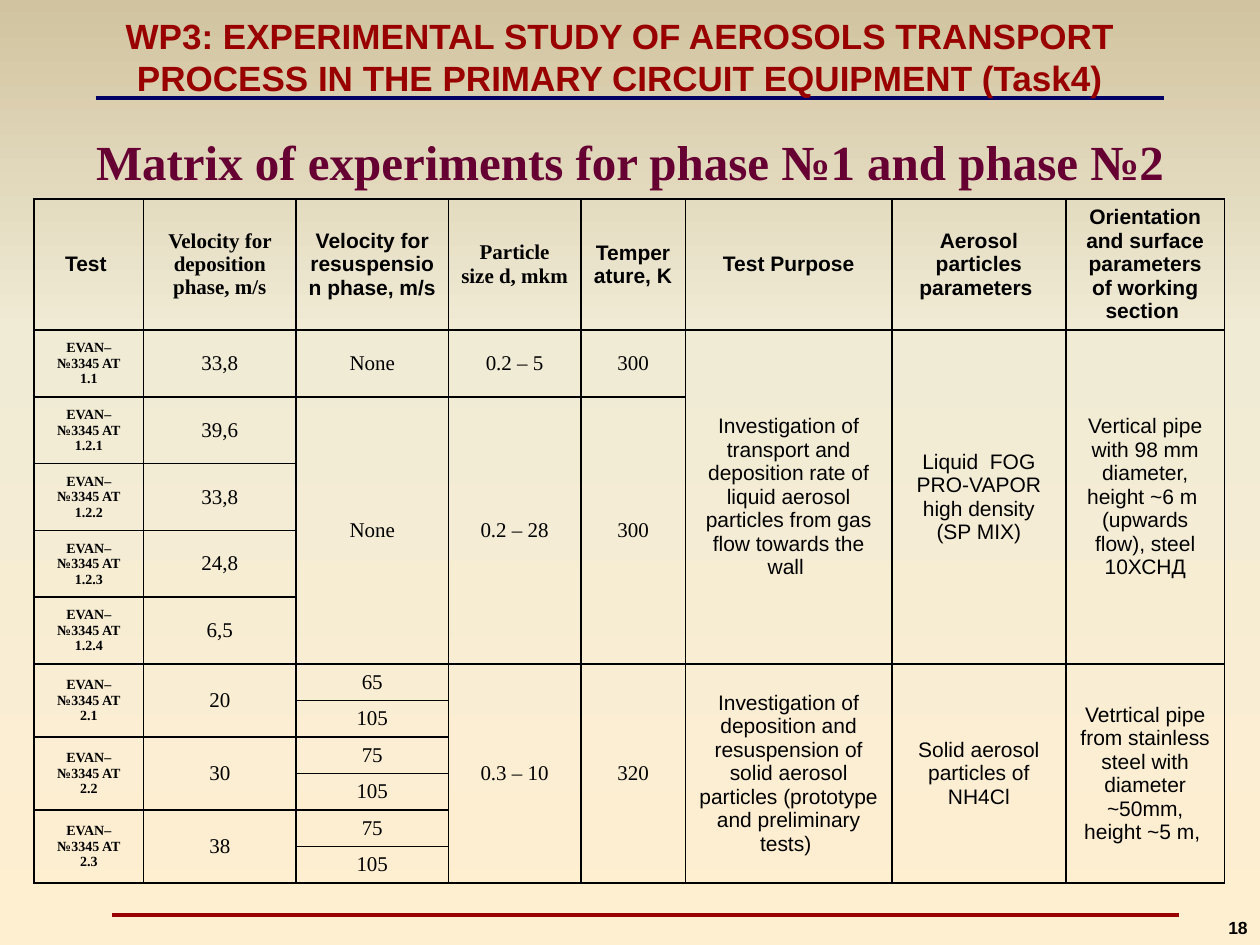
from copy import deepcopy

from lxml.etree import SubElement
from pptx import Presentation
from pptx.dml.color import RGBColor as RGB
from pptx.enum.shapes import MSO_CONNECTOR as CONN
from pptx.enum.text import MSO_ANCHOR as ANCHOR, MSO_AUTO_SIZE as FIT, PP_ALIGN as ALIGN
from pptx.oxml.ns import qn
from pptx.util import Inches, Pt

THEME = dict(
    sans="Arial", serif="Times New Roman",
    red="990000", navy="000066", plum="660033", black="000000",
    background=[(0, "D1C39F"), (0.35, "F0EBD5"), (1, "FFEFD1")],
    title=20, heading=28, body=12, test=8, number=10, rule=2.25, border=1,
)
SANS, SERIF = THEME["sans"], THEME["serif"]

TITLE = ("WP3: EXPERIMENTAL STUDY OF AEROSOLS TRANSPORT PROCESS "
         "IN THE PRIMARY CIRCUIT EQUIPMENT (Task4)")
HEADING = "Matrix of experiments for phase №1 and phase №2"
NUMBER = "18"
RULES = [(0.76, 9.24, 0.78, "navy"), (0.89, 9.36, 7.26, "red")]

COLUMNS = [
    ("Test ", 0.87, SANS),
    ("Velocity for deposition phase, m/s", 1.21, SERIF),
    ("Velocity for resuspension phase, m/s", 1.21, SANS),
    ("Particle size d, mkm", 1.05, SERIF),
    ("Temperature, K ", 0.83, SANS),
    ("Test Purpose", 1.64, SANS),
    ("Aerosol particles parameters ", 1.38, SANS),
    ("Orientation and surface parameters of working section ", 1.26, SANS),
]
ROW_HEIGHTS = [1.03] + [0.53] * 5 + [0.29] * 6
CELL_MARGIN = 0.02
TEST_MARGIN = 0.11
TESTS = [
    ("1.1", "33,8", 1), ("1.2.1", "39,6", 1), ("1.2.2", "33,8", 1),
    ("1.2.3", "24,8", 1), ("1.2.4", "6,5", 1),
    ("2.1", "20", 2), ("2.2", "30", 2), ("2.3", "38", 2),
]
RESUSPENSION = ["65", "105", "75", "105", "75", "105"]
CONDITIONS = [
    (1, 1, 2, ["None", "0.2 – 5", "300"]),
    (2, 4, 2, ["None", "0.2 – 28", "300"]),
    (6, 6, 3, ["0.3 – 10", "320"]),
]
DESCRIPTIONS = [
    (1, 5, 5, [
        "Investigation of transport and deposition rate of liquid aerosol "
        "particles from gas flow towards the wall ",
        "Liquid  FOG PRO-VAPOR high density (SP MIX)",
        "Vertical pipe with 98 mm diameter, height ~6 m  (upwards flow), "
        "steel 10ХСНД",
    ]),
    (6, 6, 5, [
        "Investigation of deposition and resuspension of solid aerosol "
        "particles (prototype and preliminary tests) ",
        "Solid aerosol particles of NH4Cl",
        "Vetrtical pipe from stainless steel with diameter ~50mm, "
        "height ~5 m, ",
    ]),
]


def write(tf, text, font=SANS, size=THEME["body"], color="black", bold=False,
          align=ALIGN.CENTER):
    p = tf.paragraphs[0]
    p.alignment = align
    r = p.add_run()
    r.text = text
    r.font.name, r.font.size, r.font.bold = font, Pt(size), bold
    r.font.color.rgb = RGB.from_string(THEME[color])


def add_text(s, box, text, anchor=ANCHOR.MIDDLE, wrap=True, **fmt):
    tf = s.shapes.add_textbox(*map(Inches, box)).text_frame
    tf.word_wrap, tf.vertical_anchor = wrap, anchor
    write(tf, text, **fmt)
    return tf


def paint_background(s):
    fill = s.background.fill
    fill.gradient()
    fill.gradient_angle = 270
    stops = s.element.find(".//" + qn("a:gsLst"))
    stops.insert(1, deepcopy(stops[0]))
    for stop, (position, color) in zip(fill.gradient_stops, THEME["background"]):
        stop.position = position
        stop.color.rgb = RGB.from_string(color)


def add_rule(s, x1, x2, y, color):
    line = s.shapes.add_connector(CONN.STRAIGHT, *map(Inches, (x1, y, x2, y)))
    line.line.color.rgb = RGB.from_string(THEME[color])
    line.line.width = Pt(THEME["rule"])
    SubElement(line._element.spPr, qn("a:effectLst"))


def style_cell(cell):
    props = cell._tc.get_or_add_tcPr()
    for side in ("a:lnL", "a:lnR", "a:lnT", "a:lnB"):
        ln = SubElement(props, qn(side), w=str(Pt(THEME["border"])))
        fill = SubElement(ln, qn("a:solidFill"))
        SubElement(fill, qn("a:srgbClr"), val=THEME["black"])
    cell.fill.background()
    cell.vertical_anchor = ANCHOR.MIDDLE
    cell.margin_top = cell.margin_bottom = Inches(CELL_MARGIN)


def fill_cell(table, row, col, text, span=1, **fmt):
    cell = table.cell(row, col)
    if span > 1:
        cell.merge(table.cell(row + span - 1, col))
    write(cell.text_frame, text, **fmt)
    return cell


def add_matrix(s):
    size = (0.27, 1.58, sum(c[1] for c in COLUMNS), sum(ROW_HEIGHTS))
    table = s.shapes.add_table(len(ROW_HEIGHTS), len(COLUMNS),
                               *map(Inches, size)).table
    table.first_row = table.horz_banding = False
    for row, height in zip(table.rows, ROW_HEIGHTS):
        row.height = Inches(height)
    for cell in table.iter_cells():
        style_cell(cell)
    for col, (label, width, font) in enumerate(COLUMNS):
        table.columns[col].width = Inches(width)
        fill_cell(table, 0, col, label, font=font, bold=True)

    row = 1
    for name, velocity, span in TESTS:
        cell = fill_cell(table, row, 0, f"EVAN–№3345 AT {name}", span, font=SERIF,
                         size=THEME["test"], bold=True)
        cell.margin_left = cell.margin_right = Inches(TEST_MARGIN)
        fill_cell(table, row, 1, velocity, span, font=SERIF)
        row += span
    for row, velocity in enumerate(RESUSPENSION, 6):
        fill_cell(table, row, 2, velocity, font=SERIF)
    for groups, font in ((CONDITIONS, SERIF), (DESCRIPTIONS, SANS)):
        for row, span, first, texts in groups:
            for col, text in enumerate(texts, first):
                fill_cell(table, row, col, text, span, font=font)


def main():
    prs = Presentation()
    prs.slide_width, prs.slide_height = Inches(10), Inches(7.5)
    s = prs.slides.add_slide(prs.slide_layouts[6])
    paint_background(s)
    for rule in RULES:
        add_rule(s, *rule)
    add_text(s, (0.67, 0.21, 8.5, 0.47), TITLE, size=THEME["title"],
             color="red", bold=True)
    add_matrix(s)
    add_text(s, (0, 0.99, 10, 0.57), HEADING, font=SERIF,
             size=THEME["heading"], color="plum", bold=True)
    tf = add_text(s, (9.65, 7.23, 0.35, 0.27), NUMBER, anchor=ANCHOR.TOP,
                  wrap=False, size=THEME["number"], bold=True, align=ALIGN.LEFT)
    tf.auto_size = FIT.SHAPE_TO_FIT_TEXT
    tf.margin_right = Inches(0.05)
    prs.save("out.pptx")


if __name__ == "__main__":
    main()
